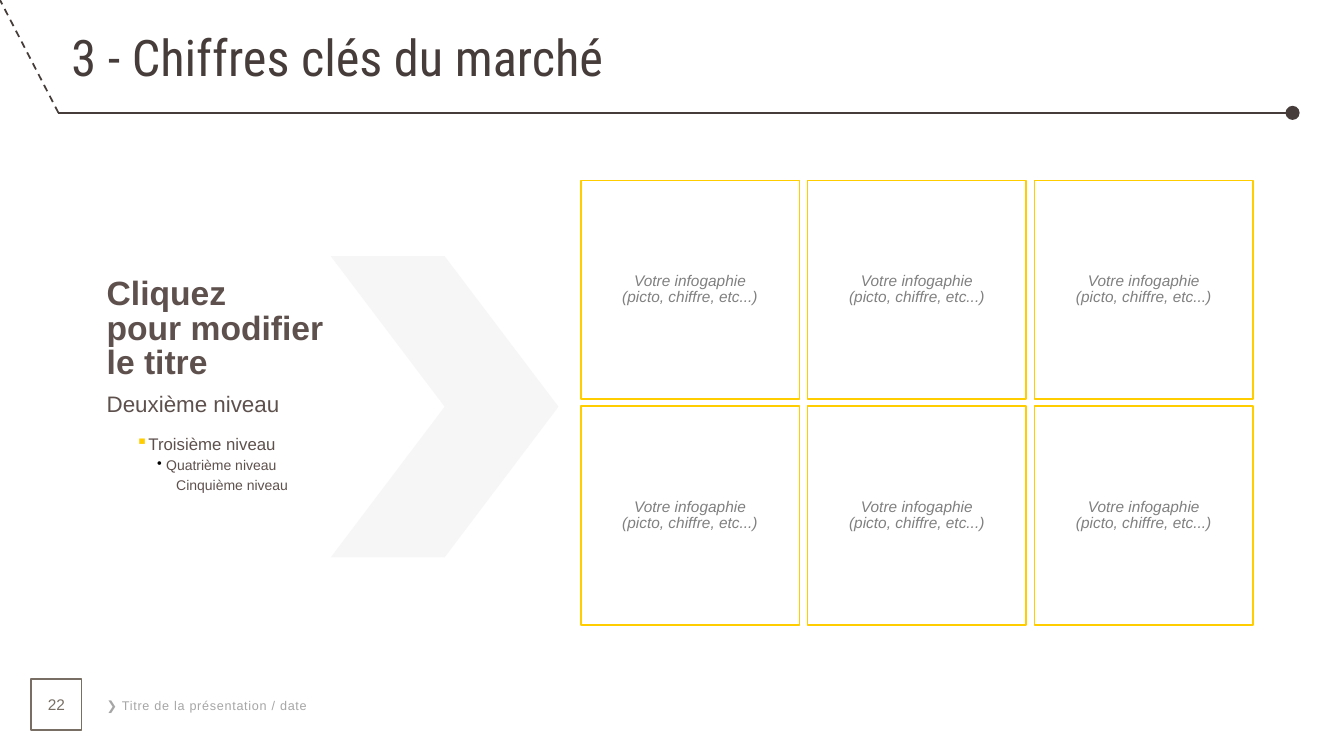
import pptx
import pptx.util
import pptx.dml.color
import pptx.enum.dml
import pptx.enum.shapes
import pptx.enum.text
import pptx.oxml
import pptx.oxml.ns

SCALE = 9144
DARK = "463D3A"
BROWN = "5E514D"
TAUPE = "786E64"
YELLOW = "FFCD00"
GREY = "808080"
PALE = "A6A6A6"
ALIGN = pptx.enum.text.PP_ALIGN
ANCHOR = pptx.enum.text.MSO_ANCHOR
SHAPES = pptx.enum.shapes.MSO_SHAPE


def px(length):
    return pptx.util.Emu(length * SCALE)


def color(value):
    return pptx.dml.color.RGBColor.from_string(value)


def add_element(parent, tag, **attributes):
    element = pptx.oxml.parse_xml(f"<a:{tag} {pptx.oxml.ns.nsdecls('a')}/>")
    for name, value in attributes.items():
        element.set(name, str(value))
    parent.append(element)
    return element


def write(paragraph, text, size, ink, font="Arial", bold=False, italic=False,
          align=ALIGN.LEFT, spacing=None, after=0, tracking=None,
          margin=0, hanging=0, bullet=None, bullet_color=None):
    properties = paragraph._p.get_or_add_pPr()
    if margin:
        properties.set("marL", str(px(margin)))
        properties.set("indent", str(px(-hanging)))
    paragraph.alignment = align
    paragraph.line_spacing = spacing
    paragraph.space_after = pptx.util.Pt(after)
    if bullet:
        add_element(add_element(properties, "buClr"), "srgbClr", val=bullet_color)
        add_element(properties, "buChar", char=bullet)
    paragraph.text = text
    for run in paragraph.runs:
        run.font.name = font
        run.font.size = pptx.util.Pt(size)
        run.font.bold = bold
        run.font.italic = italic
        run.font.color.rgb = color(ink)
        if tracking:
            run._r.get_or_add_rPr().set("spc", str(tracking))


def add_text_box(slide, box, anchor=ANCHOR.MIDDLE):
    shape = slide.shapes.add_textbox(*map(px, box))
    shape.text_frame.word_wrap = True
    shape.text_frame.vertical_anchor = anchor
    return shape.text_frame


def add_shape(slide, kind, box, fill=None, line=None):
    shape = slide.shapes.add_shape(kind, *map(px, box))
    shape.shadow.inherit = False
    if fill:
        shape.fill.solid()
        shape.fill.fore_color.rgb = color(fill)
    else:
        shape.fill.background()
    if line:
        shape.line.color.rgb = color(line)
        shape.line.width = pptx.util.Pt(1.25)
    else:
        shape.line.fill.background()
    shape.text_frame.word_wrap = True
    shape.text_frame.vertical_anchor = ANCHOR.MIDDLE
    return shape


def add_line(slide, start, end, dash=None):
    connector = slide.shapes.add_connector(
        pptx.enum.shapes.MSO_CONNECTOR.STRAIGHT, *map(px, start + end))
    connector.line.color.rgb = color(DARK)
    connector.line.width = pptx.util.Pt(1.25)
    connector.line.dash_style = dash
    add_element(connector._element.spPr, "effectLst")


def add_header(slide, box):
    left, top, width, height = box
    corner = (left + 58, top + height)
    end = (left + width, top + height)
    add_line(slide, end, corner)
    add_line(slide, corner, (left, top), pptx.enum.dml.MSO_LINE.DASH)
    add_shape(slide, SHAPES.OVAL, (end[0] - 7, end[1] - 7, 14, 14), fill=DARK)
    frame = add_text_box(slide, (left + 61, top + 27, 1207, 68))
    write(frame.paragraphs[0], "3 - Chiffres clés du marché", 36, DARK,
          font="Roboto Condensed", spacing=0.85)


def add_chevron(slide, box):
    chevron = add_shape(slide, SHAPES.CHEVRON, box, fill="D9D9D9")
    fill_color = chevron._element.spPr.find(".//" + pptx.oxml.ns.qn("a:srgbClr"))
    add_element(fill_color, "alpha", val=21000)


def add_introduction(slide, box):
    frame = add_text_box(slide, box)
    frame.margin_bottom = px(38)
    detail = dict(align=ALIGN.JUSTIFY, spacing=1.2)
    levels = [
        ("Cliquez\vpour modifier\vle titre", 24, dict(bold=True, spacing=0.85, after=9)),
        ("Deuxième niveau", 16, dict(spacing=0.85, after=9)),
        ("Troisième niveau", 12, dict(detail, margin=39, hanging=10,
                                      bullet="▪", bullet_color=YELLOW)),
        ("Quatrième niveau", 10, dict(detail, margin=59, hanging=9,
                                      bullet="•", bullet_color="000000")),
        ("Cinquième niveau", 10, dict(detail, margin=78, hanging=9)),
    ]
    for index, (text, size, style) in enumerate(levels):
        paragraph = frame.add_paragraph() if index else frame.paragraphs[0]
        write(paragraph, text, size, BROWN, **style)


def add_infographic_grid(slide, box, columns=3, rows=2, side=217):
    left, top, width, height = box
    column_step = (width - side) // (columns - 1)
    row_step = (height - side) // (rows - 1)
    for row in range(rows):
        for column in range(columns):
            cell = add_shape(slide, SHAPES.RECTANGLE,
                             (left + column * column_step, top + row * row_step,
                              side, side), line=YELLOW)
            write(cell.text_frame.paragraphs[0],
                  "Votre infogaphie\v(picto, chiffre, etc...)", 11, GREY,
                  italic=True, align=ALIGN.CENTER, spacing=0.85, after=9)


def add_footer(slide, box):
    left, top, width, height = box
    number = add_shape(slide, SHAPES.RECTANGLE, (left, top, height, height), line=TAUPE)
    write(number.text_frame.paragraphs[0], "22", 11, TAUPE, align=ALIGN.CENTER)
    frame = add_text_box(slide, (left + 65, top + 13, width - 65, 25), ANCHOR.TOP)
    write(frame.paragraphs[0], "❯ Titre de la présentation / date", 9, PALE, tracking=50)


def add_key_figures_slide(presentation):
    slide = presentation.slides.add_slide(presentation.slide_layouts[6])
    add_chevron(slide, (328, 254, 226, 299))
    add_header(slide, (0, 0, 1282, 112))
    add_footer(slide, (31, 674, 342, 50))
    add_infographic_grid(slide, (576, 179, 667, 441))
    add_introduction(slide, (96, 179, 392, 441))


def main():
    presentation = pptx.Presentation()
    presentation.slide_width = px(1333)
    presentation.slide_height = px(750)
    add_key_figures_slide(presentation)
    presentation.save("out.pptx")


if __name__ == "__main__":
    main()
